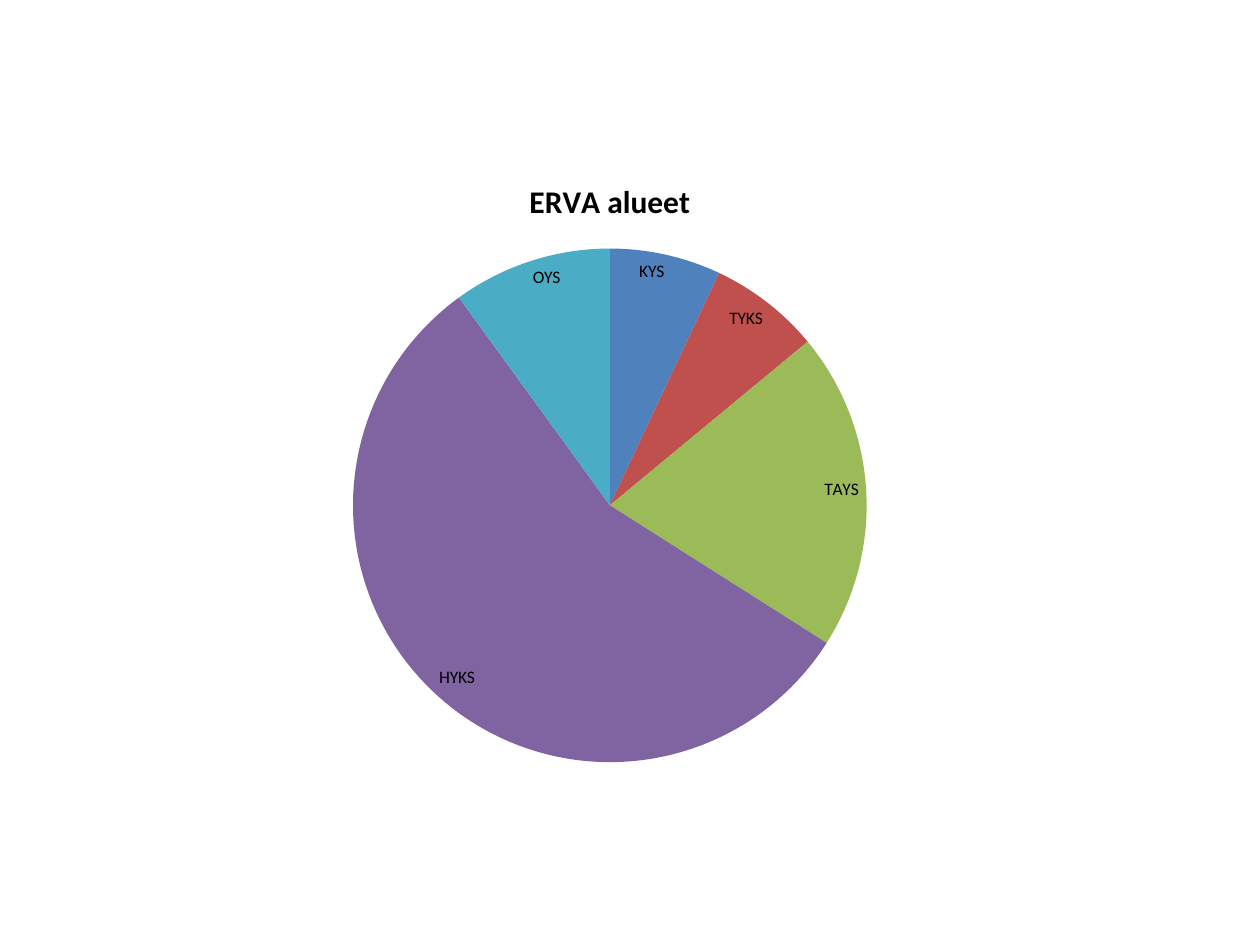
from pptx import Presentation
from pptx.chart.data import CategoryChartData
from pptx.dml.color import RGBColor
from pptx.enum.chart import XL_CHART_TYPE, XL_LABEL_POSITION
from pptx.util import Inches, Pt

PIE = XL_CHART_TYPE.PIE
INSIDE_END = XL_LABEL_POSITION.INSIDE_END

BLACK = RGBColor(0x00, 0x00, 0x00)
BLUE = RGBColor(0x4F, 0x81, 0xBD)
RED = RGBColor(0xC0, 0x50, 0x4D)
GREEN = RGBColor(0x9B, 0xBB, 0x59)
PURPLE = RGBColor(0x80, 0x64, 0xA2)
TEAL = RGBColor(0x4B, 0xAC, 0xC6)

# Region, share in percent, slice colour
REGIONS = [
    ("KYS", 7, BLUE),
    ("TYKS", 7, RED),
    ("TAYS", 20, GREEN),
    ("HYKS", 56, PURPLE),
    ("OYS", 10, TEAL),
]


class SlideBuilder:
    """Holds the style and the current slide; lengths are percent of the slide."""

    font_name = "Calibri"
    title_size = Pt(18)
    label_size = Pt(10)

    def __init__(self, deck):
        self.width, self.height = deck.slide_width, deck.slide_height
        self.page = deck.slides.add_slide(deck.slide_layouts[6])

    def style(self, font, size, bold=False):
        font.name = self.font_name
        font.size = size
        font.bold = bold
        font.color.rgb = BLACK

    def pie(self, title, slices, left, top, width, height):
        names, values, colours = zip(*slices)
        data = CategoryChartData()
        data.categories = names
        data.add_series("Series 1", values)
        chart = self.page.shapes.add_chart(
            PIE,
            int(self.width * left / 100), int(self.height * top / 100),
            int(self.width * width / 100), int(self.height * height / 100),
            data,
        ).chart
        self.style(chart.font, self.label_size)
        chart.has_legend = False

        # Title
        chart.has_title = True
        para = chart.chart_title.text_frame.paragraphs[0]
        para.text = title
        self.style(para.font, self.title_size, bold=True)
        chart.chart_title.include_in_layout = False

        # Slices
        plot = chart.plots[0]
        plot.vary_by_categories = True
        for index, colour in enumerate(colours):
            fill = plot.series[0].points[index].format.fill
            fill.solid()
            fill.fore_color.rgb = colour

        # Category labels inside the rim
        labels = plot.series[0].data_labels
        labels.show_category_name = True
        labels.show_value = False
        labels.show_percentage = False
        labels.position = INSIDE_END
        self.style(labels.font, self.label_size)


def main():
    deck = Presentation()
    deck.slide_width, deck.slide_height = Inches(10), Inches(7.5)
    builder = SlideBuilder(deck)
    builder.pie("ERVA alueet", REGIONS, left=11.4, top=16.4, width=74, height=66.1)
    deck.save("out.pptx")


if __name__ == "__main__":
    main()
